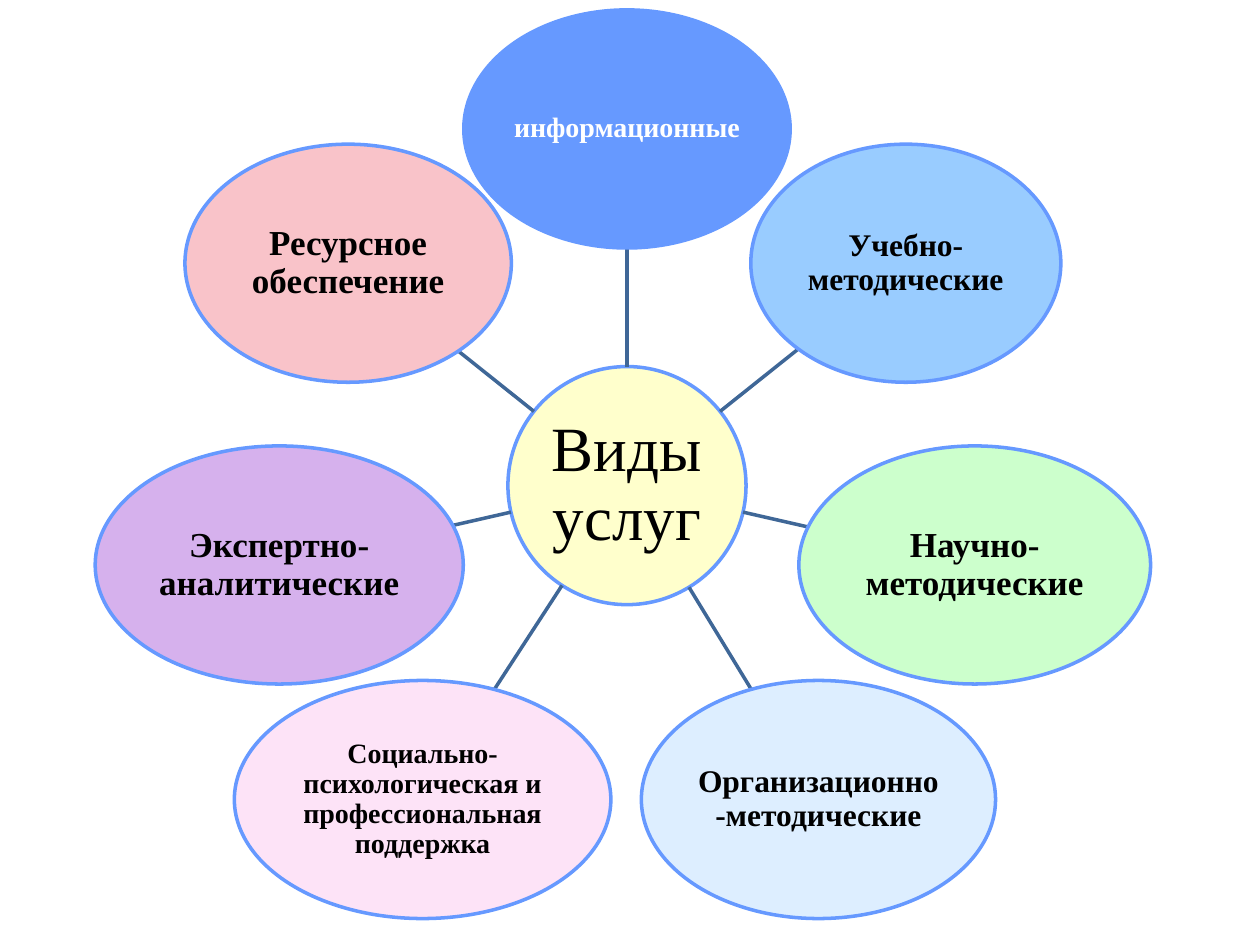
from math import cos, hypot, pi, sin

from lxml import etree
from pptx import Presentation
from pptx.dml.color import RGBColor
from pptx.enum.shapes import MSO_CONNECTOR, MSO_SHAPE
from pptx.enum.text import MSO_ANCHOR, PP_ALIGN
from pptx.oxml.ns import qn
from pptx.util import Cm, Pt

OVAL = MSO_SHAPE.OVAL
STRAIGHT = MSO_CONNECTOR.STRAIGHT
MIDDLE = MSO_ANCHOR.MIDDLE
CENTER = PP_ALIGN.CENTER

FONT = "Times New Roman"
RIM, SPOKE = "6699FF", "3F6797"
BLACK, WHITE = "000000", "FFFFFF"

# All lengths are in centimetres
HUB_X, HUB_Y = 12.64, 9.79
RADIUS = 7.19
HEIGHT = 4.8

# Clockwise from the top: text, width, fill, text colour, size, nudge
PETALS = [
    ("информационные", 6.58, "6699FF", WHITE, 16, (0, 0)),
    ("Учебно-методические", 6.25, "99CCFF", BLACK, 18, (0, 0)),
    ("Научно-методические", 7.09, "CCFFCC", BLACK, 20, (0, 0)),
    ("Организационно-методические", 7.14, "DDEEFF", BLACK, 18, (0.74, -0.15)),
    ("Социально-психологическая и профессиональная поддержка",
     7.59, "FDE3F7", BLACK, 16, (-1, -0.15)),
    ("Экспертно-аналитические", 7.42, "D6B1ED", BLACK, 20, (0, 0)),
    ("Ресурсное обеспечение", 6.58, "F9C3C9", BLACK, 20, (0, 0)),
]


def color(code):
    return RGBColor.from_string(code)


def add_oval(slide, x, y, width, fill, text, size, ink=BLACK, bold=True, inset=0.03):
    """Draw a labelled oval centred on x, y."""
    oval = slide.shapes.add_shape(
        OVAL, Cm(x - width / 2), Cm(y - HEIGHT / 2), Cm(width), Cm(HEIGHT))
    oval.shadow.inherit = False
    oval.fill.solid()
    oval.fill.fore_color.rgb = color(fill)
    oval.line.color.rgb = color(RIM)
    oval.line.width = Pt(2)

    frame = oval.text_frame
    frame.word_wrap = True
    frame.vertical_anchor = MIDDLE
    frame.margin_left = frame.margin_right = Cm(inset)
    frame.margin_top = frame.margin_bottom = Cm(inset)
    label = frame.paragraphs[0]
    label.text = text
    label.alignment = CENTER
    label.line_spacing = 0.9
    label.font.name = FONT
    label.font.size = Pt(size)
    label.font.bold = bold
    label.font.color.rgb = color(ink)


def add_spoke(slide, x, y, width):
    """Join the rim of the hub to the rim of the petal centred on x, y."""
    dx, dy = x - HUB_X, y - HUB_Y
    start = HEIGHT / 2 / hypot(dx, dy)
    end = 1 - 1 / hypot(dx / (width / 2), dy / (HEIGHT / 2))
    spoke = slide.shapes.add_connector(
        STRAIGHT,
        Cm(HUB_X + dx * start), Cm(HUB_Y + dy * start),
        Cm(HUB_X + dx * end), Cm(HUB_Y + dy * end))
    spoke.line.color.rgb = color(SPOKE)
    spoke.line.width = Pt(2)
    etree.SubElement(spoke._element.spPr, qn("a:effectLst"))


def main():
    deck = Presentation()
    deck.slide_width, deck.slide_height = Cm(25.4), Cm(19.05)
    slide = deck.slides.add_slide(deck.slide_layouts[6])

    add_oval(slide, HUB_X, HUB_Y, HEIGHT, "FFFFCC", "Виды услуг", 36,
             bold=False, inset=0.08)
    for i, (text, width, fill, ink, size, nudge) in enumerate(PETALS):
        angle = 2 * pi * i / len(PETALS)
        x = HUB_X + RADIUS * sin(angle) + nudge[0]
        y = HUB_Y - RADIUS * cos(angle) + nudge[1]
        add_spoke(slide, x, y, width)
        add_oval(slide, x, y, width, fill, text, size, ink)

    deck.save("out.pptx")


if __name__ == "__main__":
    main()
